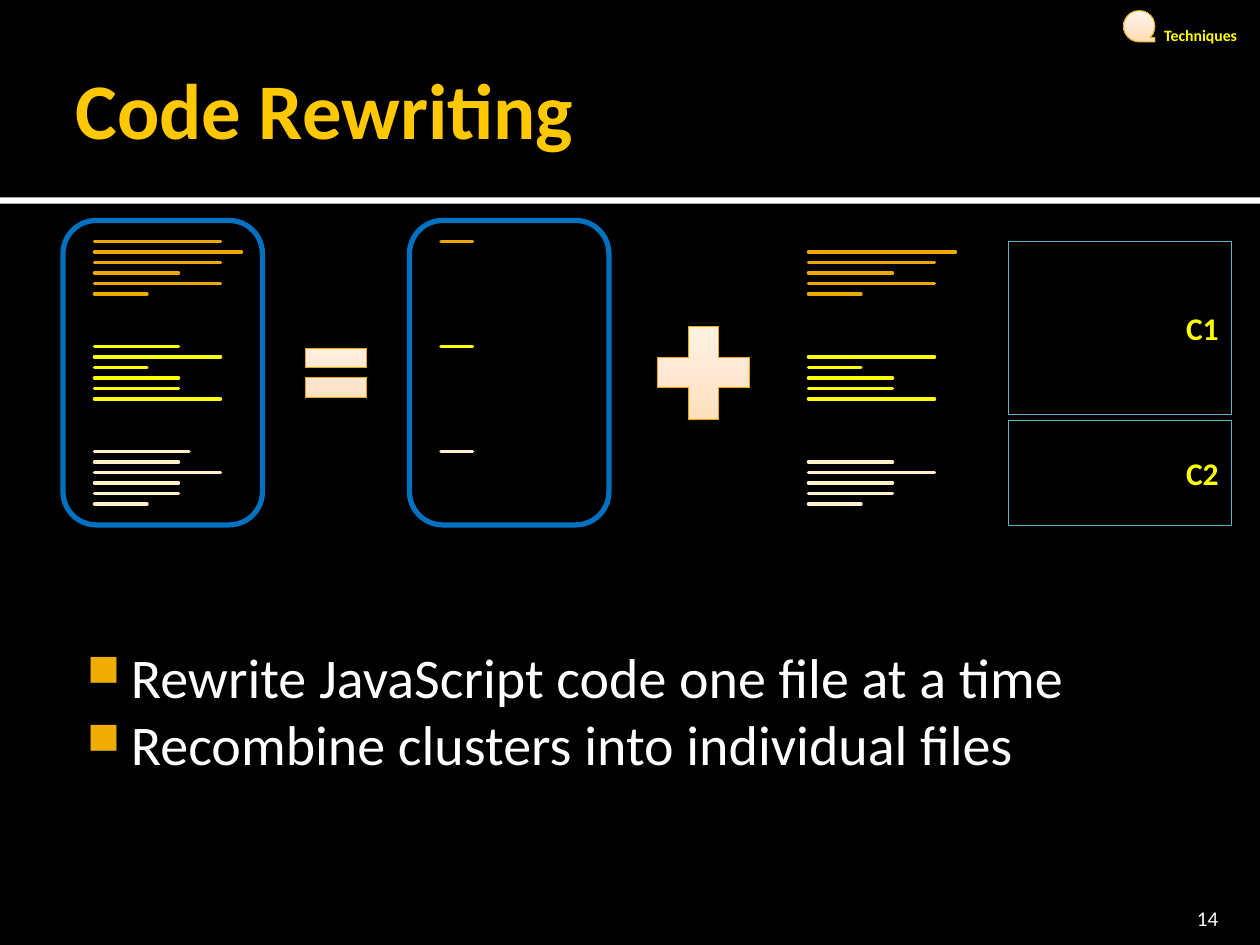
import copy
from dataclasses import dataclass

import pptx
import pptx.dml.color
import pptx.enum.shapes
import pptx.enum.text
import pptx.oxml
import pptx.oxml.ns
import pptx.util

SHAPE = pptx.enum.shapes.MSO_SHAPE
ALIGN = pptx.enum.text.PP_ALIGN
ANCHOR = pptx.enum.text.MSO_ANCHOR
COLUMNS, ROWS = 120, 90  # grid of twelve cells to the inch


@dataclass(frozen=True)
class Theme:
    font: str = "Calibri"
    background: str = "000000"
    text: str = "FFFFFF"
    title: str = "FFC800"
    label: str = "FFFF00"
    bullet: str = "F0AD00"
    file_outline: str = "0070C0"
    cluster_outline: str = "5BB3CA"
    code: tuple = ("EBA900", "FFFF00", "FFF0C9")
    symbol_outline: str = "EBA900"
    symbol_stops: tuple = ((0, "FFDBB5"), (0.35, "FFE5CB"), (1, "FFF5EB"))
    title_size: int = 45
    body_size: int = 32
    cluster_size: int = 18
    number_size: int = 12
    tag_size: int = 9


@dataclass(frozen=True)
class Box:
    left: float
    top: float
    width: float
    height: float

    def inner(self, left, top, width, height):
        return Box(self.left + left, self.top + top, width, height)

    def emu(self):
        return [cells(n) for n in (self.left, self.top, self.width, self.height)]


THEME = Theme()
# Line lengths, in columns, of the three functions in the file
FUNCTIONS = ((12, 14, 12, 8, 12, 5), (8, 12, 5, 8, 8, 12), (9, 8, 12, 8, 8, 5))
FUNCTION_PITCH = 10
STUB_LENGTH = 3


def cells(count):
    return pptx.util.Inches(count / 12)


def rgb(color):
    return pptx.dml.color.RGBColor.from_string(color)


def write(shape, lines, size, color, bold=False, align=ALIGN.LEFT,
          anchor=ANCHOR.TOP, insets=(0.1, 0.05, 0.1, 0.05), wrap=True):
    frame = shape.text_frame
    frame.text = "\n".join(lines)
    frame.word_wrap = wrap
    frame.vertical_anchor = anchor
    (frame.margin_left, frame.margin_top,
     frame.margin_right, frame.margin_bottom) = map(pptx.util.Inches, insets)
    for paragraph in frame.paragraphs:
        paragraph.alignment = align
        font = paragraph.runs[0].font
        font.name, font.size, font.bold = THEME.font, pptx.util.Pt(size), bold
        font.color.rgb = rgb(color)


def add_text(slide, box, *args, **options):
    shape = slide.shapes.add_textbox(*box.emu())
    write(shape, *args, **options)
    return shape


def add_outline(slide, kind, box, color, width):
    shape = slide.shapes.add_shape(kind, *box.emu())
    shape.shadow.inherit = False
    shape.fill.background()
    shape.line.color.rgb = rgb(color)
    shape.line.width = pptx.util.Pt(width)
    return shape


def add_symbol(slide, kind, box):
    shape = add_outline(slide, kind, box, THEME.symbol_outline, 0.5)
    shape.fill.gradient()
    shape.fill.gradient_angle = 90
    stop_list = shape.element.find(".//" + pptx.oxml.ns.qn("a:gsLst"))
    stop_list.insert(1, copy.deepcopy(stop_list[0]))
    for stop, (position, color) in zip(shape.fill.gradient_stops, THEME.symbol_stops):
        stop.position = position
        stop.color.rgb = rgb(color)


def add_code_line(slide, left, top, length, color):
    connector = slide.shapes.add_connector(
        pptx.enum.shapes.MSO_CONNECTOR.STRAIGHT,
        cells(left), cells(top), cells(left + length), cells(top))
    connector.line.color.rgb = rgb(color)
    connector.line.width = pptx.util.Pt(2)
    properties = connector.element.spPr
    properties.find(pptx.oxml.ns.qn("a:ln")).set("cap", "rnd")
    properties.append(properties.makeelement(pptx.oxml.ns.qn("a:effectLst"), {}))


def add_file(slide, box, functions, first_row=0, framed=True):
    """Draw code lines, starting each function at the given row of its body."""
    if framed:
        add_outline(slide, SHAPE.ROUNDED_RECTANGLE, box, THEME.file_outline, 3)
    for index, (lengths, color) in enumerate(zip(functions, THEME.code)):
        top = box.top + 2 + index * FUNCTION_PITCH + first_row
        for row, length in enumerate(lengths):
            add_code_line(slide, box.left + 3, top + row, length, color)


def add_cluster(slide, box, name):
    shape = add_outline(slide, SHAPE.RECTANGLE, box, THEME.cluster_outline, 0.5)
    write(shape, [name], THEME.cluster_size, THEME.label, bold=True,
          align=ALIGN.RIGHT, anchor=ANCHOR.MIDDLE)


def add_equation(slide, box):
    """Show the file as its stubs plus the function bodies in two clusters."""
    add_cluster(slide, box.inner(90, 2, 21.25, 16.5), "C1")
    add_cluster(slide, box.inner(90, 19, 21.25, 10), "C2")
    add_file(slide, box.inner(0, 0, 19, 29), FUNCTIONS)
    add_symbol(slide, SHAPE.MATH_EQUAL, box.inner(22, 10.5, 8, 8))
    add_file(slide, box.inner(33, 0, 19, 29), [[STUB_LENGTH]] * len(FUNCTIONS))
    add_symbol(slide, SHAPE.MATH_PLUS, box.inner(55, 8.5, 12, 12))
    bodies = [lengths[1:] for lengths in FUNCTIONS]
    add_file(slide, box.inner(68, 0, 19, 29), bodies, first_row=1, framed=False)


def add_header(slide, box):
    rule = slide.shapes.add_shape(
        SHAPE.RECTANGLE, *box.inner(0, box.height, box.width, 0.6).emu())
    rule.shadow.inherit = False
    rule.fill.solid()
    rule.fill.fore_color.rgb = rgb(THEME.text)
    rule.line.fill.background()
    add_text(slide, box.inner(6, 2, 108, 16.5), ["Code Rewriting"], THEME.title_size,
             THEME.title, bold=True, anchor=ANCHOR.MIDDLE)
    add_symbol(slide, SHAPE.FLOWCHART_SEQUENTIAL_ACCESS_STORAGE,
               box.inner(107, 1, 3, 3))
    add_text(slide, box.inner(109.7, 1.9, 9.8, 3), ["Techniques"], THEME.tag_size,
             THEME.label, bold=True, wrap=False)


def add_bullets(slide, box, lines):
    shape = add_text(slide, box, lines, THEME.body_size, THEME.text,
                     insets=(0.06, 0.1, 0.1, 0.05))
    namespace = pptx.oxml.ns.nsdecls("a")
    for paragraph in shape.text_frame.paragraphs:
        properties = paragraph._p.get_or_add_pPr()
        properties.set("marL", str(pptx.util.Inches(0.48)))
        properties.set("indent", str(pptx.util.Inches(-0.35)))
        for tag in (f'<a:buClr {namespace}><a:srgbClr val="{THEME.bullet}"/></a:buClr>',
                    f'<a:buSzPct {namespace} val="80000"/>',
                    f'<a:buChar {namespace} char="■"/>'):
            properties.append(pptx.oxml.parse_xml(tag))


def add_slide_number(slide, box, number):
    add_text(slide, box, [number], THEME.number_size, THEME.text, align=ALIGN.RIGHT,
             anchor=ANCHOR.BOTTOM, insets=(0.1, 0.05, 0.1, 0))


def main():
    presentation = pptx.Presentation()
    presentation.slide_width, presentation.slide_height = cells(COLUMNS), cells(ROWS)
    slide = presentation.slides.add_slide(presentation.slide_layouts[6])
    slide.background.fill.solid()
    slide.background.fill.fore_color.rgb = rgb(THEME.background)
    add_header(slide, Box(0, 0, COLUMNS, 18.8))
    add_equation(slide, Box(6, 21, 111.25, 29))
    add_bullets(slide, Box(6, 60, 108, 24), [
        "Rewrite JavaScript code one file at a time",
        "Recombine clusters into individual files"])
    add_slide_number(slide, Box(107.6, 85, 9.6, 3.6), "14")
    presentation.save("out.pptx")


if __name__ == "__main__":
    main()
